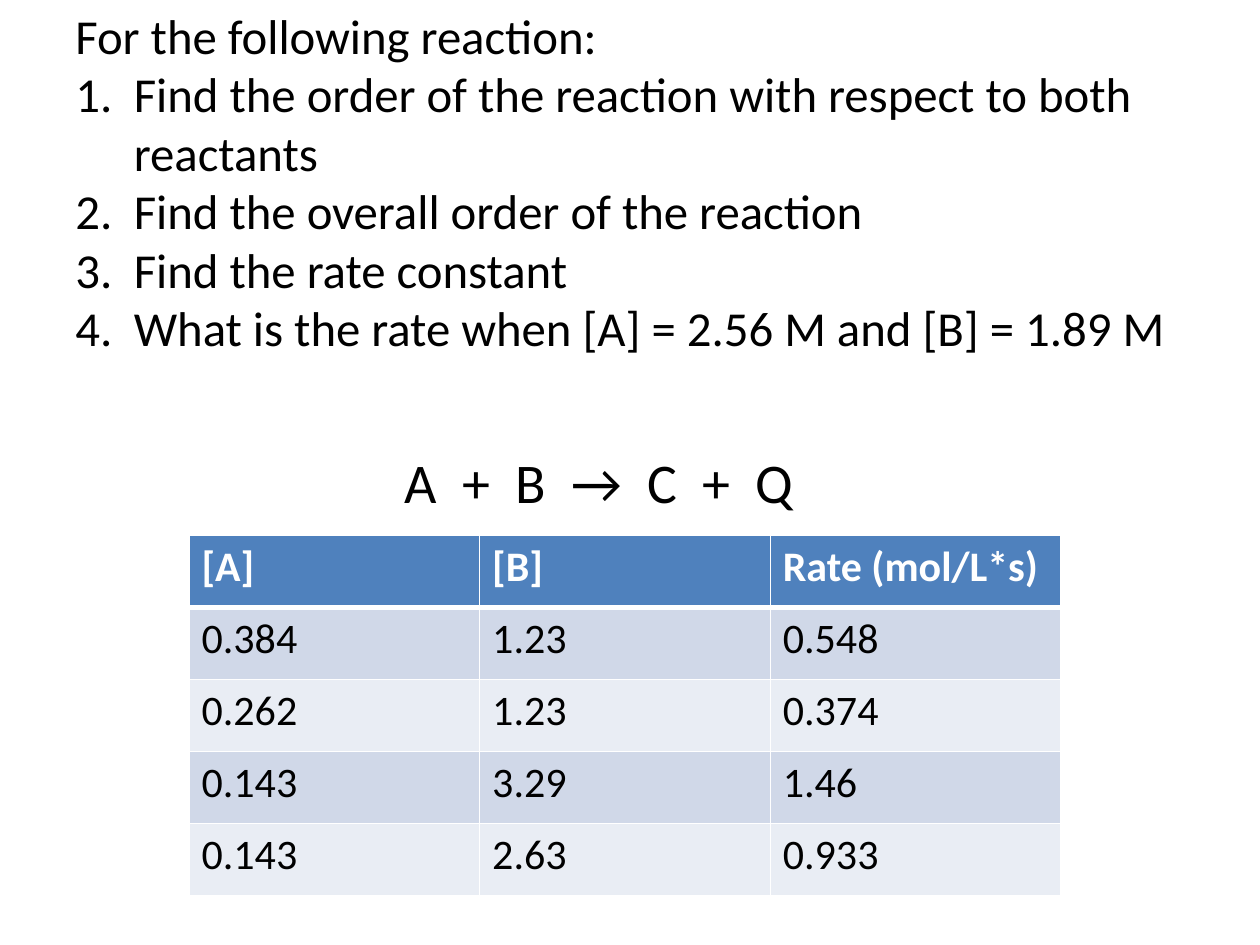
import pptx
import pptx.dml.color
import pptx.enum.text
import pptx.oxml.ns
import pptx.util
from lxml import etree
from pptx.util import Cm

COLORS = {
    "text": "000000",
    "header": "4F81BD",
    "header_text": "FFFFFF",
    "border": "FFFFFF",
    "odd_row": "D0D8E8",
    "even_row": "E9EDF4",
}
FONT = "Calibri"
INTRO = "For the following reaction:"
TASKS = [
    "Find the order of the reaction with respect to both reactants",
    "Find the overall order of the reaction",
    "Find the rate constant",
    "What is the rate when [A] = 2.56 M and [B] = 1.89 M",
]
EQUATION = "A  +  B  →  C  +  Q"
TRIALS = [
    ["[A]", "[B]", "Rate (mol/L*s)"],
    ["0.384", "1.23", "0.548"],
    ["0.262", "1.23", "0.374"],
    ["0.143", "3.29", "1.46"],
    ["0.143", "2.63", "0.933"],
]


def rgb(name):
    return pptx.dml.color.RGBColor.from_string(COLORS[name])


def add_child(parent, tag, **attributes):
    return etree.SubElement(parent, pptx.oxml.ns.qn(tag), attributes)


def style(paragraph, size, color="text", bold=False):
    paragraph.font.name = FONT
    paragraph.font.size = pptx.util.Pt(size)
    paragraph.font.bold = bold
    paragraph.font.color.rgb = rgb(color)


def number(paragraph, indent):
    properties = paragraph._p.get_or_add_pPr()
    properties.set("marL", str(indent))
    properties.set("indent", str(-indent))
    add_child(properties, "a:buFont", typeface="+mj-lt")
    add_child(properties, "a:buAutoNum", type="arabicPeriod")


def add_questions(slide):
    frame = slide.shapes.add_textbox(Cm(1.27), Cm(1.7), Cm(22.86), Cm(5.08)).text_frame
    frame.word_wrap = True
    frame.vertical_anchor = pptx.enum.text.MSO_ANCHOR.MIDDLE
    frame.margin_bottom = Cm(1.3)
    frame.text = "\n".join([INTRO] + TASKS)
    for paragraph in frame.paragraphs:
        style(paragraph, 27.9)
        paragraph.line_spacing = pptx.util.Pt(33.4)
    for task in frame.paragraphs[1:]:
        number(task, Cm(1.18))


def add_equation(slide):
    frame = slide.shapes.add_textbox(Cm(6.15), Cm(8.89), Cm(11.86), Cm(1.62)).text_frame
    frame.word_wrap = True
    frame.text = EQUATION
    equation = frame.paragraphs[0]
    equation.alignment = pptx.enum.text.PP_ALIGN.CENTER
    style(equation, 32)


def add_borders(cell, widths):
    properties = cell._tc.get_or_add_tcPr()
    for index, (side, width) in enumerate(widths.items()):
        line = etree.Element(
            pptx.oxml.ns.qn(f"a:ln{side}"), {"w": str(pptx.util.Pt(width))}
        )
        fill = add_child(line, "a:solidFill")
        add_child(fill, "a:srgbClr", val=COLORS["border"])
        properties.insert(index, line)


def add_trials(slide):
    table = slide.shapes.add_table(
        len(TRIALS), len(TRIALS[0]), Cm(3.81), Cm(10.8), Cm(17.58), Cm(7.25)
    ).table
    for row, values in enumerate(TRIALS):
        header = row == 0
        band = "header" if header else "odd_row" if row % 2 else "even_row"
        widths = {"L": 1, "R": 1, "T": 3 if row == 1 else 1, "B": 3 if header else 1}
        for column, value in enumerate(values):
            cell = table.cell(row, column)
            cell.text = value
            cell.fill.solid()
            cell.fill.fore_color.rgb = rgb(band)
            style(cell.text_frame.paragraphs[0], 24,
                  "header_text" if header else "text", header)
            add_borders(cell, widths)


def main():
    deck = pptx.Presentation()
    deck.slide_width, deck.slide_height = Cm(25.4), Cm(19.05)
    slide = deck.slides.add_slide(deck.slide_layouts[6])
    add_questions(slide)
    add_trials(slide)
    add_equation(slide)
    deck.save("out.pptx")


if __name__ == "__main__":
    main()
